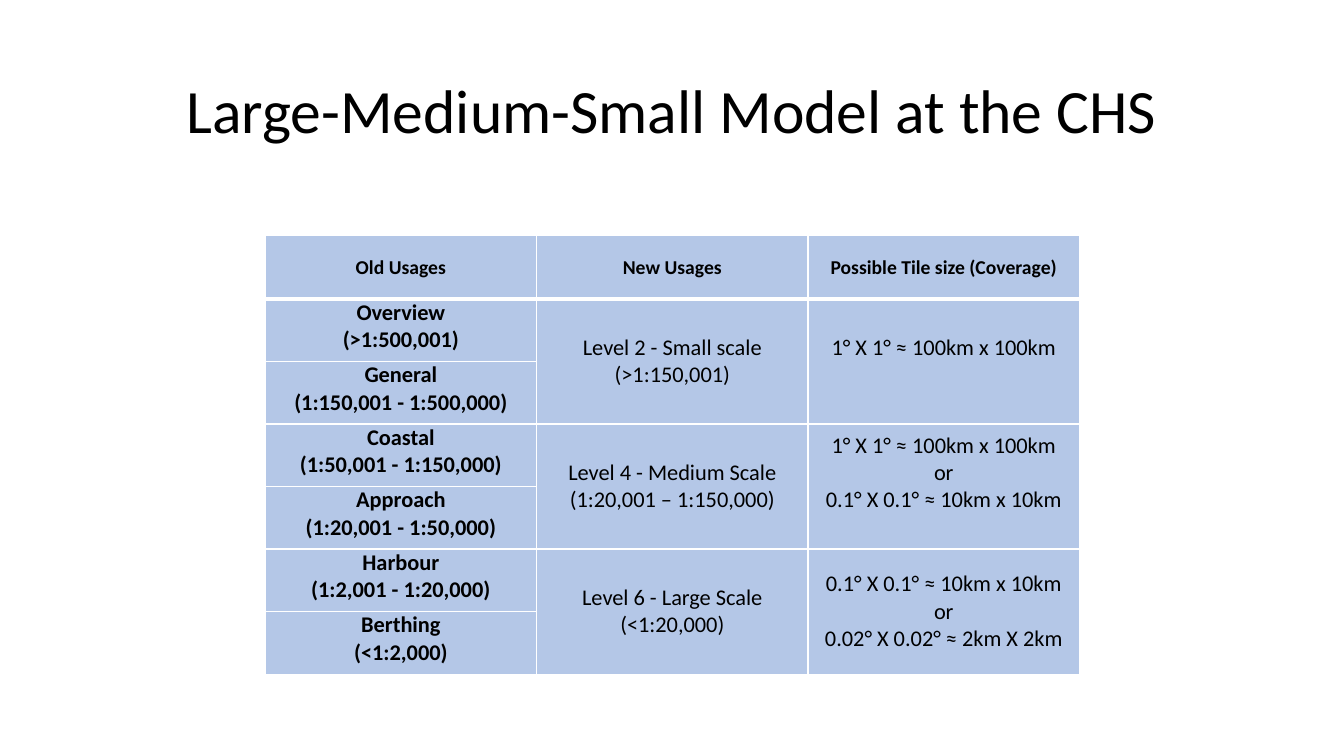
from dataclasses import dataclass

from lxml.etree import SubElement
from pptx import Presentation
from pptx.dml.color import RGBColor as RGB
from pptx.enum.text import MSO_ANCHOR as Anchor, PP_ALIGN as Align
from pptx.oxml.ns import qn
from pptx.util import Pt


@dataclass(frozen=True)
class Theme:
    font: str = "Calibri"
    ink: str = "000000"
    fill: str = "B4C7E7"
    line: str = "FFFFFF"
    title: int = 44
    head: int = 14
    body: int = 16


THEME = Theme()
COL, ROW, HEAD = 193.9, 44.7, 45
PAD, LINE = 5.2, 19.5  # side inset, height of a body line

HEADS = ["Old Usages", "New Usages", "Possible Tile size (Coverage)"]

# Two old usages, the level that replaces them, its tile sizes, space below
GROUPS = [
    (["Overview\n(>1:500,001)", "General\n(1:150,001 - 1:500,000)"],
     "Level 2 - Small scale\n(>1:150,001)",
     "1° X 1° ≈ 100km x 100km", LINE),
    (["Coastal\n(1:50,001 - 1:150,000)", "Approach\n(1:20,001 - 1:50,000)"],
     "Level 4 - Medium Scale\n(1:20,001 – 1:150,000)",
     "1° X 1° ≈ 100km x 100km\nor\n0.1° X 0.1° ≈ 10km x 10km", LINE),
    (["Harbour\n(1:2,001 - 1:20,000)", "Berthing\n(<1:2,000)"],
     "Level 6 - Large Scale\n(<1:20,000)",
     "0.1° X 0.1° ≈ 10km x 10km\nor\n0.02° X 0.02° ≈ 2km X 2km", 0),
]


def write(frame, text, size=THEME.body, bold=False, space=1.0):
    """Fill a text frame with one centred paragraph per line."""
    frame.text = text
    for par in frame.paragraphs:
        par.alignment = Align.CENTER
        par.line_spacing = space
        for run in par.runs:
            font = run.font
            font.name, font.size, font.bold = THEME.font, Pt(size), bold
            font.color.rgb = RGB.from_string(THEME.ink)


def inset(cell, side, top, base):
    cell.margin_left = cell.margin_right = Pt(side)
    cell.margin_top, cell.margin_bottom = Pt(top), Pt(base)


def paint(cell, top=1, base=1):
    """Draw the cell borders, then its fill."""
    props = cell._tc.get_or_add_tcPr()
    for side, width in zip("LRTB", (1, 1, top, base)):
        edge = SubElement(props, qn(f"a:ln{side}"), w=str(Pt(width)))
        solid = SubElement(edge, qn("a:solidFill"))
        SubElement(solid, qn("a:srgbClr"), val=THEME.line)
    cell.fill.solid()
    cell.fill.fore_color.rgb = RGB.from_string(THEME.fill)


def add_title(slide, text):
    title = slide.shapes.title
    title.left, title.top = Pt(66), Pt(28.8)
    title.width, title.height = Pt(828), Pt(104.4)
    title.text_frame.vertical_anchor = Anchor.MIDDLE
    write(title.text_frame, text, size=THEME.title, space=0.9)


def add_grid(slide):
    count = 1 + 2 * len(GROUPS)
    grid = slide.shapes.add_table(
        count, len(HEADS), Pt(189.4), Pt(168.5),
        Pt(COL * len(HEADS)), Pt(HEAD + ROW * (count - 1))).table
    grid.first_row = grid.horz_banding = False
    for col in grid.columns:
        col.width = Pt(COL)
    for num, row in enumerate(grid.rows):
        row.height = Pt(ROW if num else HEAD)
        for cell in row.cells:
            paint(cell, top=3 if num == 1 else 1, base=1 if num else 3)

    # Header row
    for col, text in enumerate(HEADS):
        cell = grid.cell(0, col)
        inset(cell, 14, 14, 14)
        write(cell.text_frame, text, size=THEME.head, bold=True)

    # Each group takes two rows; its level and tiles span both
    for num, (olds, level, tiles, below) in enumerate(GROUPS):
        first = 1 + 2 * num
        for step, text in enumerate(olds):
            cell = grid.cell(first + step, 0)
            inset(cell, PAD, 0, 0)
            write(cell.text_frame, text, bold=True)
        for col, text, base in ((1, level, 0), (2, tiles, below)):
            cell = grid.cell(first, col)
            cell.merge(grid.cell(first + 1, col))
            cell.vertical_anchor = Anchor.MIDDLE
            inset(cell, PAD, 0, base)
            write(cell.text_frame, text)


def main():
    deck = Presentation()
    deck.slide_width, deck.slide_height = Pt(960), Pt(540)
    slide = deck.slides.add_slide(deck.slide_layouts[5])
    add_title(slide, "Large-Medium-Small Model at the CHS")
    add_grid(slide)
    deck.save("out.pptx")


if __name__ == "__main__":
    main()
